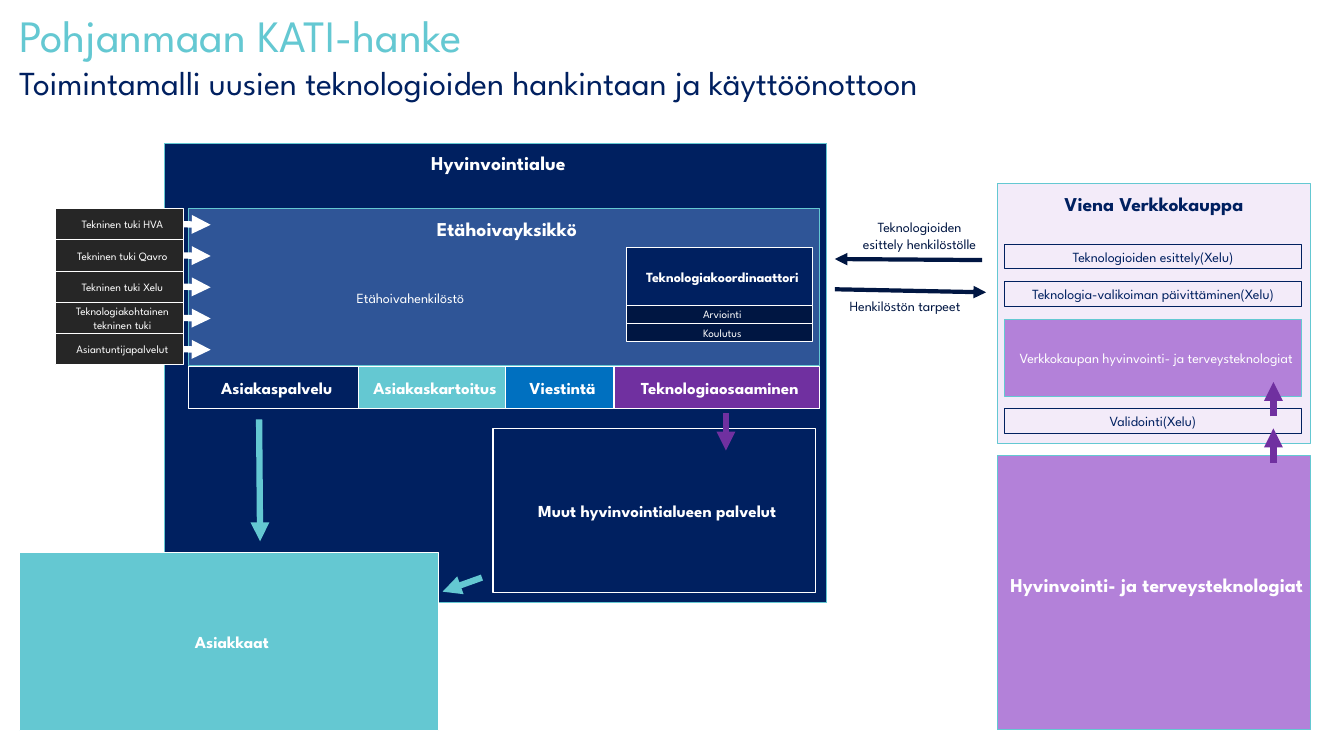
from dataclasses import dataclass

from lxml.etree import SubElement
from pptx import Presentation
from pptx.dml.color import RGBColor
from pptx.enum.shapes import MSO_CONNECTOR as Connector, MSO_SHAPE as Shape
from pptx.enum.text import MSO_ANCHOR as Anchor, PP_ALIGN as Align
from pptx.oxml.ns import qn
from pptx.shapes.autoshape import Shape as AutoShape
from pptx.shapes.connector import Connector as Line
from pptx.slide import Slide
from pptx.text.text import TextFrame
from pptx.util import Inches, Pt

FONT = "League Spartan"
COLORS = {
    "navy": "002060", "midnight": "001642", "blue": "2F5597", "azure": "0070C0",
    "teal": "64C8D2", "purple": "7030A0", "lilac": "B381D9", "pale": "F3EBF9",
    "charcoal": "262626", "white": "FFFFFF",
}
RIGHT_SIDE = 3


@dataclass
class Box:
    text: str
    left: float
    top: float
    width: float
    height: float
    fill: str
    line: str = "white"
    size: float = 12
    bold: bool = False
    color: str = "white"
    heading: bool = False
    inset_left: float = 0.08
    inset_bottom: float = 0.02


@dataclass
class Label:
    text: str
    left: float
    top: float
    width: float
    height: float
    color: str


@dataclass
class Arrow:
    start: tuple[float, float]
    end: tuple[float, float]
    color: str
    weight: float = 4.5


def rgb(name: str) -> RGBColor:
    return RGBColor.from_string(COLORS[name])


def format_text(frame: TextFrame, size: float, color: str, bold: bool = False) -> None:
    for paragraph in frame.paragraphs:
        paragraph.alignment = Align.CENTER
        font = paragraph.font
        font.name, font.size, font.bold = FONT, Pt(size), bold
        font.color.rgb = rgb(color)


def add_box(slide: Slide, box: Box) -> AutoShape:
    shape = slide.shapes.add_shape(Shape.RECTANGLE, Inches(box.left), Inches(box.top),
                                   Inches(box.width), Inches(box.height))
    shape.shadow.inherit = False
    shape.fill.solid()
    shape.fill.fore_color.rgb = rgb(box.fill)
    shape.line.color.rgb = rgb(box.line)
    shape.line.width = Pt(0.75)
    frame = shape.text_frame
    frame.word_wrap = True
    frame.vertical_anchor = Anchor.TOP if box.heading else Anchor.MIDDLE
    frame.margin_left = Inches(box.inset_left)
    frame.margin_right = Inches(0.02)
    frame.margin_top = Inches(0.08 if box.heading else 0.02)
    frame.margin_bottom = Inches(box.inset_bottom)
    frame.text = box.text
    format_text(frame, box.size, box.color, box.bold)
    return shape


def add_label(slide: Slide, label: Label) -> None:
    frame = slide.shapes.add_textbox(Inches(label.left), Inches(label.top),
                                     Inches(label.width), Inches(label.height)).text_frame
    frame.word_wrap = False
    frame.text = label.text
    format_text(frame, 10, label.color)


def add_arrow(slide: Slide, arrow: Arrow) -> Line:
    points = [Inches(value) for value in (*arrow.start, *arrow.end)]
    connector = slide.shapes.add_connector(Connector.STRAIGHT, *points)
    connector.line.color.rgb = rgb(arrow.color)
    connector.line.width = Pt(arrow.weight)
    properties = connector.line._get_or_add_ln()
    SubElement(properties, qn("a:tailEnd"), type="triangle")
    SubElement(properties.getparent(), qn("a:effectLst"))
    return connector


def add_title(slide: Slide) -> None:
    title = slide.shapes.title
    title.left, title.top = Inches(0.09), Inches(0.03)
    title.width, title.height = Inches(13.24), Inches(1.04)
    frame = title.text_frame
    frame.word_wrap = True
    frame.vertical_anchor = Anchor.TOP
    frame.text = ("Pohjanmaan KATI-hanke\n"
                  "Toimintamalli uusien teknologioiden hankintaan ja käyttöönottoon")
    for paragraph, size, color in zip(frame.paragraphs, (32, 24), ("teal", "navy")):
        paragraph.alignment = Align.LEFT
        paragraph.line_spacing = 1.0
        paragraph.space_before = Pt(0)
        paragraph.font.name, paragraph.font.size = FONT, Pt(size)
        paragraph.font.color.rgb = rgb(color)


PANELS = [
    Box("Hyvinvointialue", 1.63, 1.42, 6.57, 4.56, "navy", "teal", 14, True, heading=True),
    Box("Viena Verkkokauppa", 9.89, 1.82, 3.11, 2.58, "pale", "teal", 14, True, "navy",
        heading=True, inset_left=0.02),
    Box("Etähoivayksikkö", 1.87, 2.07, 6.26, 1.56, "blue", "teal", 14, True, heading=True),
    Box("Teknologiakoordinaattori", 6.21, 2.46, 1.85, 0.57, "navy", size=10, bold=True),
    Box("Verkkokaupan hyvinvointi- ja terveysteknologiat", 9.96, 3.17, 2.95, 0.76,
        "lilac", "teal", 10),
    Box("Hyvinvointi- ja terveysteknologiat", 9.89, 4.52, 3.11, 2.72, "lilac", "teal",
        14, True, inset_bottom=0.18),
    Box("Muut hyvinvointialueen palvelut", 4.89, 4.25, 3.2, 1.63, "navy", bold=True),
    Box("Asiakkaat", 0.19, 5.48, 4.16, 1.77, "teal", bold=True),
]
SHOP_STEPS = [
    ("Teknologioiden esittely(Xelu)", 2.43, 0.23),
    ("Teknologia-valikoiman päivittäminen(Xelu)", 2.79, 0.25),
    ("Validointi(Xelu)", 4.05, 0.25),
]
SERVICES = [
    ("Asiakaspalvelu", 1.69, "navy"),
    ("Asiakaskartoitus", 1.45, "teal"),
    ("Viestintä", 1.08, "azure"),
    ("Teknologiaosaaminen", 2.04, "purple"),
]
COORDINATOR_TASKS = ["Arviointi", "Koulutus"]
SUPPORT = ["Tekninen tuki HVA", "Tekninen tuki Qavro", "Tekninen tuki Xelu",
           "Teknologiakohtainen\ntekninen tuki", "Asiantuntijapalvelut"]
LABELS = [
    Label("Henkilöstön tarpeet", 8.2, 2.9, 1.55, 0.27, "midnight"),
    Label("Teknologioiden\nesittely henkilöstölle", 8.32, 2.12, 1.6, 0.44, "midnight"),
    Label("Etähoivahenkilöstö", 3.32, 2.82, 1.5, 0.27, "white"),
]
ARROWS = [
    Arrow((8.28, 2.87), (9.78, 2.9), "midnight", 3),
    Arrow((9.74, 2.58), (8.28, 2.57), "midnight", 3),
    Arrow((12.63, 4.59), (12.63, 4.25), "purple"),
    Arrow((12.63, 4.13), (12.63, 3.79), "purple"),
    Arrow((2.57, 4.16), (2.58, 5.37), "teal"),
    Arrow((4.78, 5.73), (4.39, 5.87), "teal"),
    Arrow((7.2, 4.1), (7.2, 4.47), "purple"),
]


def main() -> None:
    presentation = Presentation()
    presentation.slide_width, presentation.slide_height = Inches(13.33), Inches(7.5)
    slide = presentation.slides.add_slide(presentation.slide_layouts[5])
    add_title(slide)

    for panel in PANELS:
        add_box(slide, panel)
    for text, top, height in SHOP_STEPS:
        add_box(slide, Box(text, 9.96, top, 2.95, height, "pale", "navy", 10,
                           color="navy", inset_left=0.02))
    service_left = 1.87
    for text, width, fill in SERVICES:
        add_box(slide, Box(text, service_left, 3.64, width, 0.41, fill, bold=True))
        service_left += width
    for row, text in enumerate(COORDINATOR_TASKS):
        add_box(slide, Box(text, 6.21, 3.03 + 0.18 * row, 1.85, 0.18, "midnight", size=8))
    for row, text in enumerate(SUPPORT):
        top = 2.07 + 0.31 * row
        middle = top + 0.16
        support = add_box(slide, Box(text, 0.55, top, 1.27, 0.31, "charcoal", size=8))
        arrow = add_arrow(slide, Arrow((1.82, middle), (2.09, middle), "white"))
        arrow.begin_connect(support, RIGHT_SIDE)

    for label in LABELS:
        add_label(slide, label)
    for arrow in ARROWS:
        add_arrow(slide, arrow)
    presentation.save("out.pptx")


if __name__ == "__main__":
    main()
